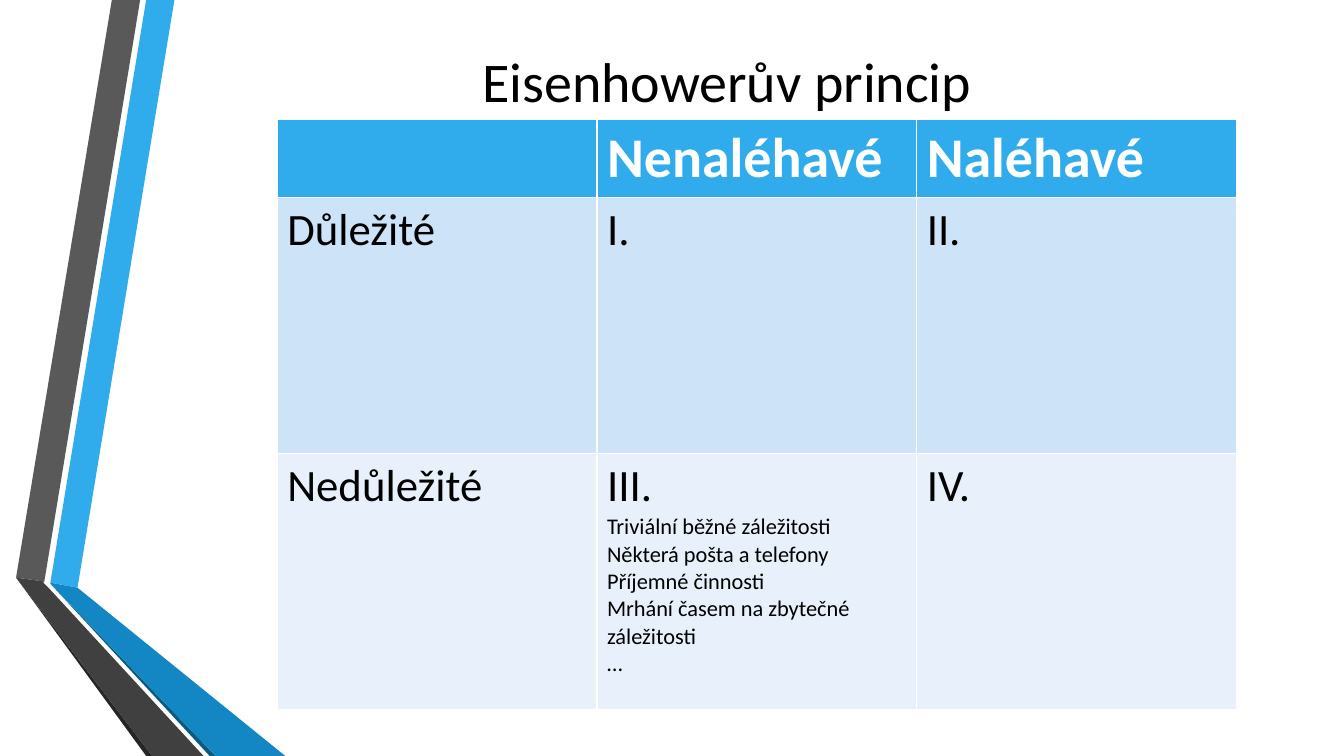
from dataclasses import dataclass

from pptx import Presentation
from pptx.dml.color import RGBColor
from pptx.enum.text import MSO_ANCHOR, MSO_AUTO_SIZE, PP_ALIGN
from pptx.util import Pt

CENTER = PP_ALIGN.CENTER
MIDDLE = MSO_ANCHOR.MIDDLE
NO_AUTOFIT = MSO_AUTO_SIZE.NONE
TITLE_ONLY = 5


@dataclass(frozen=True)
class Theme:
    font: str = "Calibri"
    text: str = "000000"
    header_text: str = "FFFFFF"
    background: str = "FFFFFF"
    header: str = "30ACEC"
    bands: tuple = ("CDE3F8", "E8F1FB")
    blue: str = "30ACEC"
    blue_fold: str = "1287C3"
    blue_shade: str = "0C5A82"
    grey: str = "595959"
    grey_fold: str = "404040"
    grey_shade: str = "262626"
    heading_size: int = 40
    label_size: int = 32
    detail_size: int = 16


THEME = Theme()

# Each ribbon piece: theme colour name and outline in points
RIBBONS = [
    ("blue", [(36, 416.2), (55.4, 419.8), (124.6, 0), (104.4, 0)]),
    ("grey", [(100.1, 0), (79.9, 0), (11.5, 412.6), (31.7, 415.4)]),
    ("grey_shade", [(11.5, 412.6), (104.4, 540), (108.7, 540)]),
    ("blue_shade", [(36, 416.9), (149.8, 540), (154.1, 540)]),
    ("blue_fold", [(36, 416.9), (154.1, 540), (203.8, 540),
                   (55.4, 419.8), (36, 416.2)]),
    ("grey_fold", [(145.4, 540), (34.6, 419.8), (31, 416.2),
                   (31.7, 415.4), (11.5, 412.6), (108.7, 540)]),
]

# Each cell is a list of paragraphs; the first one is its label
MATRIX = [
    [[], ["Nenaléhavé"], ["Naléhavé"]],
    [["Důležité"], ["I."], ["II."]],
    [["Nedůležité"],
     ["III.", "Triviální běžné záležitosti", "Některá pošta a telefony",
      "Příjemné činnosti", "Mrhání časem na zbytečné záležitosti", "…"],
     ["IV."]],
]
COLUMN_WIDTH = 228.4
ROW_HEIGHTS = [56, 183, 183]


class SlideBuilder:
    def __init__(self, slide, theme):
        self.slide = slide
        self.theme = theme
        self.fill(slide.background, theme.background)

    def fill(self, target, color):
        target.fill.solid()
        target.fill.fore_color.rgb = RGBColor.from_string(color)

    def run(self, paragraph, text, size, color, bold=False):
        font = self.add_text(paragraph, text).font
        font.name = self.theme.font
        font.size = Pt(size)
        font.bold = bold
        font.color.rgb = RGBColor.from_string(color)

    def add_text(self, paragraph, text):
        run = paragraph.add_run()
        run.text = text
        return run

    def ribbon(self, color, points):
        corners = [(Pt(x), Pt(y)) for x, y in points]
        builder = self.slide.shapes.build_freeform(*corners[0], scale=1.0)
        builder.add_line_segments(corners[1:], close=True)
        shape = builder.convert_to_shape()
        shape.shadow.inherit = False
        self.fill(shape, color)
        shape.line.fill.background()

    def title(self, text, left, top, width, height):
        shape = self.slide.shapes.title
        shape.left, shape.top = Pt(left), Pt(top)
        shape.width, shape.height = Pt(width), Pt(height)
        frame = shape.text_frame
        frame.auto_size = NO_AUTOFIT
        frame.vertical_anchor = MIDDLE
        paragraph = frame.paragraphs[0]
        paragraph.alignment = CENTER
        self.run(paragraph, text, self.theme.heading_size, self.theme.text)

    def cell(self, cell, lines, row, column):
        theme = self.theme
        is_header = row == 0
        self.fill(cell, theme.header if is_header else theme.bands[row - 1])
        frame = cell.text_frame
        for index, line in enumerate(lines):
            paragraph = frame.add_paragraph() if index else frame.paragraphs[0]
            if is_header:
                self.run(paragraph, line, theme.heading_size,
                         theme.header_text, bold=True)
                continue
            size = theme.detail_size if index else theme.label_size
            self.run(paragraph, line, size, theme.text)
            if column == 0:
                paragraph.space_before = paragraph.space_after = Pt(18)

    def matrix(self, rows, left, top, column_width, row_heights):
        """Add the table; its default style draws the white cell borders."""
        columns = len(rows[0])
        table = self.slide.shapes.add_table(
            len(rows), columns, Pt(left), Pt(top),
            Pt(column_width * columns), Pt(sum(row_heights))).table
        table.horz_banding = False
        for column in table.columns:
            column.width = Pt(column_width)
        for row, (cells, height) in enumerate(zip(rows, row_heights)):
            table.rows[row].height = Pt(height)
            for column, lines in enumerate(cells):
                self.cell(table.cell(row, column), lines, row, column)


def main():
    presentation = Presentation()
    presentation.slide_width = Pt(960)
    presentation.slide_height = Pt(540)
    layout = presentation.slide_layouts[TITLE_ONLY]
    builder = SlideBuilder(presentation.slides.add_slide(layout), THEME)
    for color_name, points in RIBBONS:
        builder.ribbon(getattr(THEME, color_name), points)
    builder.title("Eisenhowerův princip", 124.6, 15.8, 789.1, 83.5)
    builder.matrix(MATRIX, 198, 85, COLUMN_WIDTH, ROW_HEIGHTS)
    presentation.save("out.pptx")


if __name__ == "__main__":
    main()
